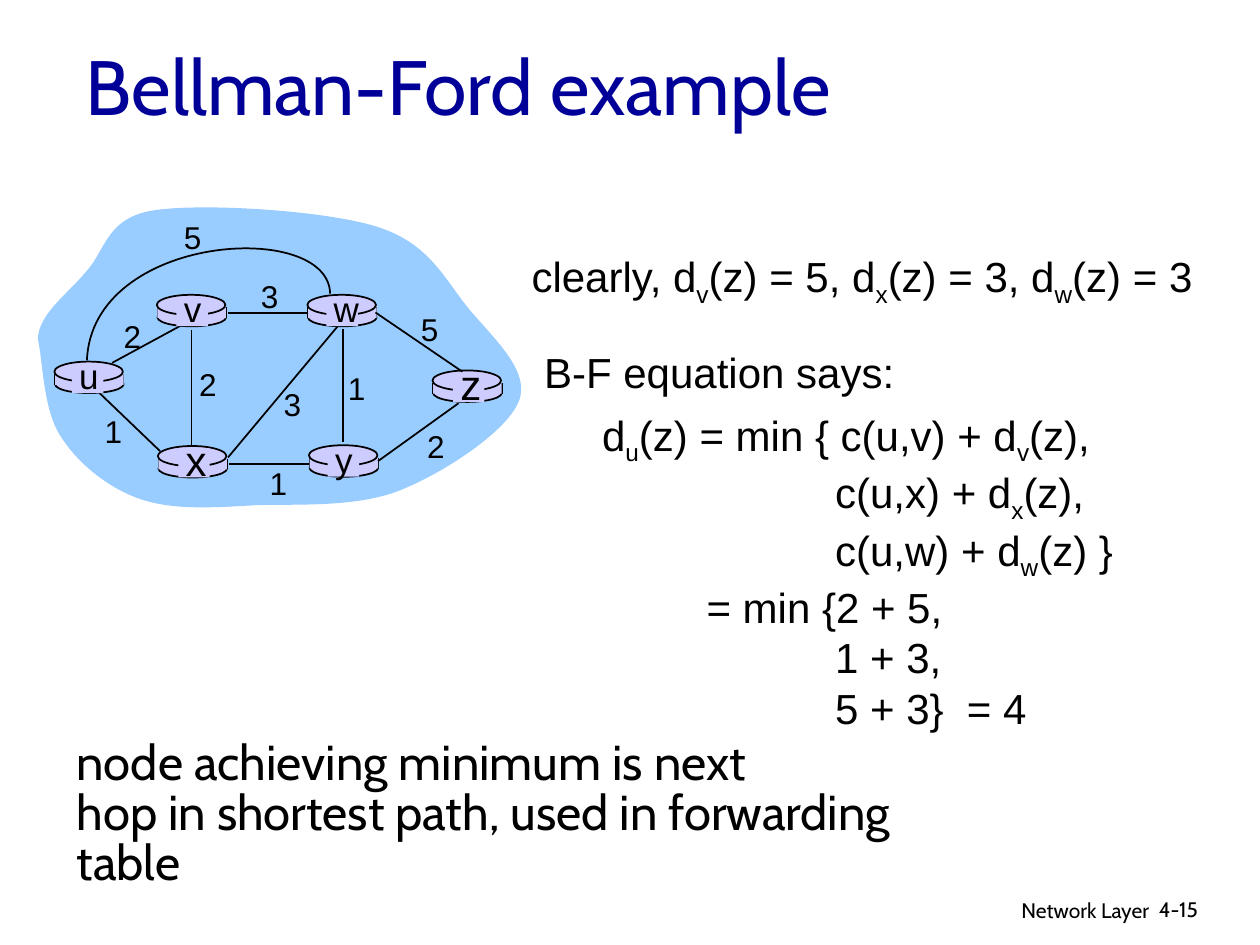
from lxml.etree import SubElement
from pptx import Presentation
from pptx.dml.color import RGBColor
from pptx.enum.shapes import MSO_CONNECTOR, MSO_SHAPE
from pptx.enum.text import MSO_ANCHOR, PP_ALIGN
from pptx.oxml.ns import qn
from pptx.util import Inches, Pt

BLACK = RGBColor(0x00, 0x00, 0x00)
TITLE_BLUE = RGBColor(0x00, 0x00, 0x99)
CLOUD_BLUE = RGBColor(0x99, 0xCC, 0xFF)
ROUTER_LILAC = RGBColor(0xCC, 0xCC, 0xFF)

WIDTH, HEIGHT = Inches(10), Inches(7.5)
COLUMNS, ROWS = 1000, 750

ROUTER_WIDTH = 54.4
ROUTERS = {
    "u": (43.2, 287, 70, 20), "x": (125.3, 354, 154.5, 24), "v": (124.5, 234, 153, 20),
    "w": (244, 234, 272, 20), "y": (245.2, 353.4, 273, 20), "z": (343.3, 294, 372.5, 24),
}
LINKS = [
    (272, 261, 272, 351), (152, 262, 152, 355), (181, 363, 268, 259),
    (300, 366, 364, 320), (245, 368.5, 182, 368.5), (127, 358, 79, 312),
    (244, 248.6, 181, 248.6), (367, 295, 298, 248),
]
COSTS = [
    ("2", 105, 267), ("2", 165, 305), ("1", 90, 342), ("3", 232, 321),
    ("1", 221, 383), ("1", 283, 308), ("2", 346, 354), ("5", 341, 261),
    ("3", 214, 235), ("5", 153, 188),
]
CLOUD = [
    (30, 269), (31, 249), (53, 234), (68, 216), (84, 199), (84, 173), (122, 167),
    (161, 161), (258, 167), (299, 180), (341, 193), (353, 222), (372, 245),
    (391, 268), (421, 294), (412, 318), (403, 342), (353, 375), (318, 389),
    (283, 403), (237, 400), (203, 401), (168, 403), (137, 405), (111, 396),
    (85, 387), (61, 367), (48, 346), (34, 325), (34, 285), (30, 269),
]
ARC = [(262, 233), (261, 174), (73, 185), (69, 286)]
EQUATION = [
    ("d_u(z) = min { c(u,v) + d_v(z),", 0),
    ("c(u,x) + d_x(z),", 185),
    ("c(u,w) + d_w(z) }", 185),
    ("= min {2 + 5,", 83),
    ("1 + 3,", 185),
    ("5 + 3}  = 4", 185),
]


def column(count):
    return round(WIDTH * count / COLUMNS)


def row(count):
    return round(HEIGHT * count / ROWS)


def box(left, top, width, height):
    return column(left), row(top), column(width), row(height)


def write(paragraph, text, indent=0, color=BLACK, spacing=None, align=PP_ALIGN.LEFT, **font_values):
    paragraph.alignment = align
    paragraph.line_spacing = spacing
    if indent:
        paragraph._p.get_or_add_pPr().set("marL", str(column(indent)))
    first, *rest = text.split("_")
    pieces = [(first, False)]
    for part in rest:
        pieces += [(part[0], True), (part[1:], False)]
    for piece, lowered in pieces:
        run = paragraph.add_run()
        run.text = piece
        for name, value in font_values.items():
            setattr(run.font, name, value)
        run.font.color.rgb = color
        if lowered:
            run._r.get_or_add_rPr().set("baseline", "-25000")


def add_text(shapes, area, lines, wrap=True, **format_values):
    frame = shapes.add_textbox(*box(*area)).text_frame
    frame.word_wrap = wrap
    for index, (text, indent) in enumerate(lines):
        paragraph = frame.add_paragraph() if index else frame.paragraphs[0]
        write(paragraph, text, indent, **format_values)


def add_label(shapes, text, center, middle, size):
    height = round(size * 5 / 3 + 10)
    add_text(shapes, (center - 17, middle - height / 2, 34, height), [(text, 0)],
             wrap=False, align=PP_ALIGN.CENTER, name="Arial", size=Pt(size))


def paint(shape, fill=None, outlined=False):
    shape.shadow.inherit = False
    if fill is None:
        shape.fill.background()
    else:
        shape.fill.solid()
        shape.fill.fore_color.rgb = fill
    if outlined:
        shape.line.color.rgb = BLACK
        shape.line.width = Pt(1)
    else:
        shape.line.fill.background()


def add_block(shapes, kind, area, outlined=False):
    paint(shapes.add_shape(kind, *box(*area)), ROUTER_LILAC, outlined)


def add_line(shapes, x1, y1, x2, y2):
    line = shapes.add_connector(MSO_CONNECTOR.STRAIGHT, column(x1), row(y1), column(x2), row(y2))
    line.line.color.rgb = BLACK
    line.line.width = Pt(1)
    SubElement(line._element.spPr, qn("a:effectLst"))


def add_curve(shapes, points, closed=False, **paint_values):
    start, *controls = [(column(x), row(y)) for x, y in points]
    builder = shapes.build_freeform(*start)
    builder.add_line_segments(controls, close=closed)
    shape = builder.convert_to_shape()
    segments = list(shape._element.iter(qn("a:lnTo")))
    for first in range(0, len(controls), 3):
        curve, *others = segments[first:first + 3]
        curve.tag = qn("a:cubicBezTo")
        for other in others:
            curve.append(other[0])
            other.getparent().remove(other)
    paint(shape, **paint_values)


def add_router(shapes, left, top):
    add_block(shapes, MSO_SHAPE.OVAL, (left + 0.5, top + 11, ROUTER_WIDTH, 14), True)
    for side in (left + 0.5, left + 0.5 + ROUTER_WIDTH):
        add_line(shapes, side, top + 10, side, top + 18.5)
    add_block(shapes, MSO_SHAPE.RECTANGLE, (left + 0.5, top + 10, ROUTER_WIDTH, 8.5))
    add_block(shapes, MSO_SHAPE.OVAL, (left, top, ROUTER_WIDTH, 16), True)


def add_router_name(shapes, name, center, top, size):
    add_block(shapes, MSO_SHAPE.RECTANGLE, (center - 13, top + 2, 25, 23))
    add_label(shapes, name, center, top + 11, size)


def add_network(slide):
    shapes = slide.shapes.add_group_shape().shapes
    add_curve(shapes, CLOUD, closed=True, fill=CLOUD_BLUE)
    add_line(shapes, 89, 288, 148, 256)
    for left, top, _, _ in ROUTERS.values():
        add_router(shapes, left, top)
    for link in LINKS:
        add_line(shapes, *link)
    add_curve(shapes, ARC, outlined=True)
    for name, (_, top, center, size) in ROUTERS.items():
        add_router_name(shapes, name, center, top, size)
    for cost, center, middle in COSTS:
        add_label(shapes, cost, center, middle, 18)


def add_title(slide, text):
    title = slide.shapes.title
    title.left, title.top, title.width, title.height = box(58, 19, 850, 96)
    title.text_frame.vertical_anchor = MSO_ANCHOR.MIDDLE
    write(title.text_frame.paragraphs[0], text, color=TITLE_BLUE, name="Cabin", size=Pt(44))


def main():
    presentation = Presentation()
    presentation.slide_width, presentation.slide_height = WIDTH, HEIGHT
    slide = presentation.slides.add_slide(presentation.slide_layouts[5])
    shapes = slide.shapes
    formula = {"name": "Arial", "size": Pt(24)}
    footer = {"name": "Cabin", "size": Pt(12)}

    add_title(slide, "Bellman-Ford example")
    add_network(slide)
    add_text(shapes, (412, 194, 552, 50),
             [("clearly, d_v(z) = 5, d_x(z) = 3, d_w(z) = 3", 0)], **formula)
    add_text(shapes, (468, 320, 427, 250), EQUATION, **formula)
    add_text(shapes, (51, 583, 740, 90),
             [("node achieving minimum is next", 0),
              ("hop in shortest path, used in forwarding table", 0)],
             spacing=0.85, name="Cabin", size=Pt(28))
    add_text(shapes, (422, 270, 298, 50), [("B-F equation says:", 0)], **formula)
    add_text(shapes, (605, 707, 317, 31), [("Network Layer", 0)], align=PP_ALIGN.RIGHT, **footer)
    add_text(shapes, (910, 707, 74, 30), [("4-15", 0)], **footer)
    presentation.save("out.pptx")


if __name__ == "__main__":
    main()
